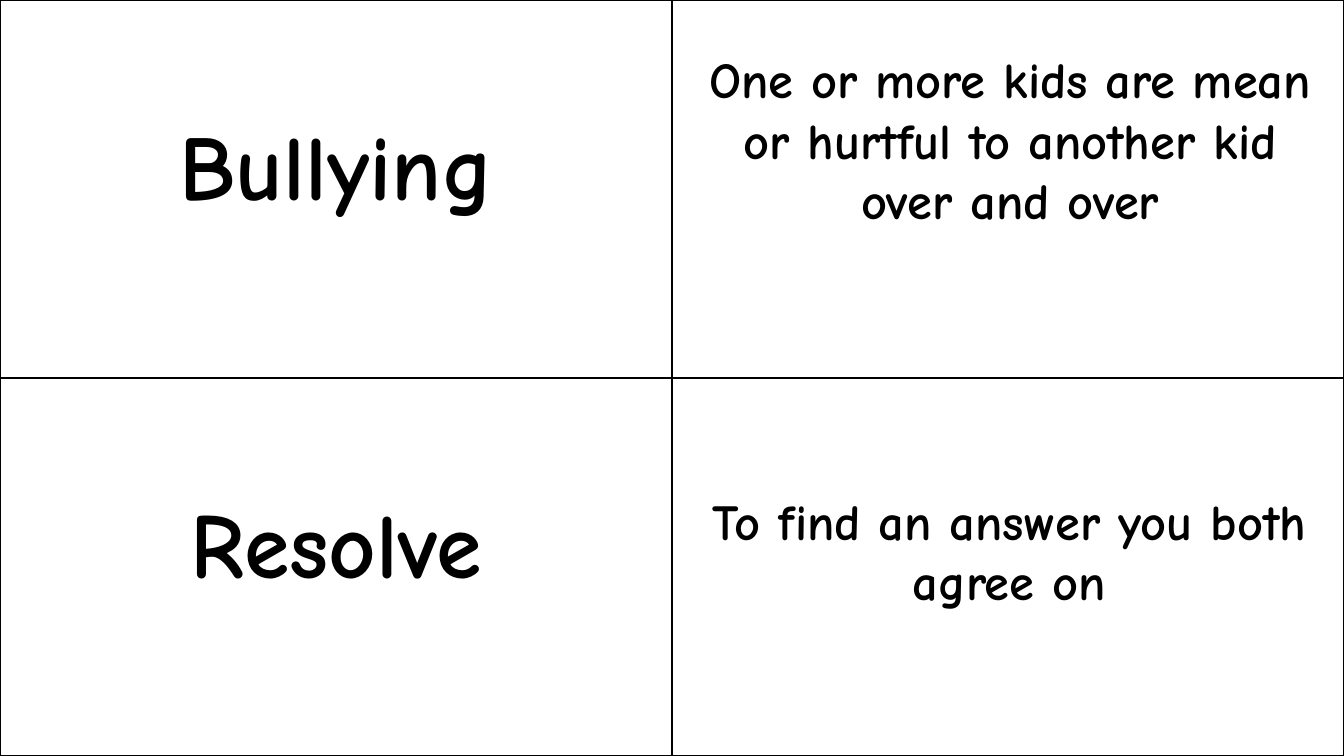
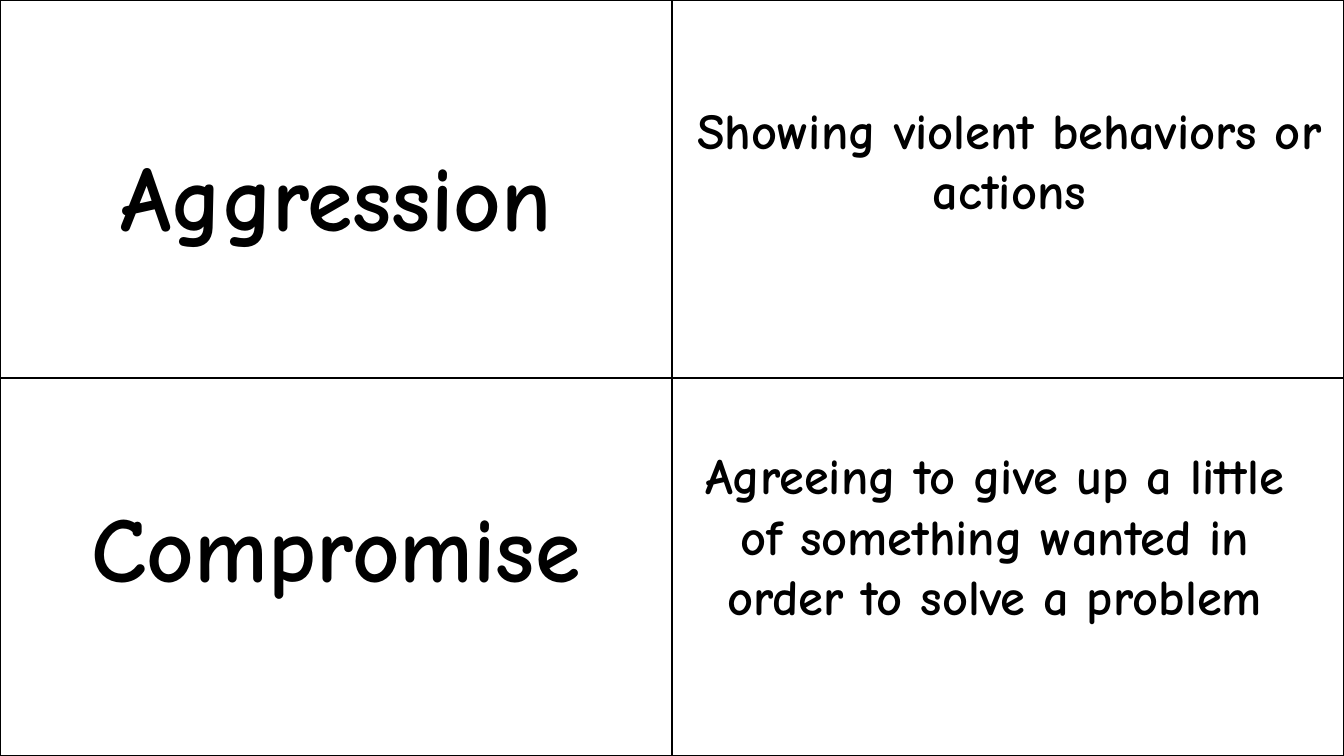
from pptx import Presentation
from pptx.dml.color import RGBColor
from pptx.enum import shapes, text
from pptx.util import Pt

BLACK = RGBColor(0, 0, 0)
WHITE = RGBColor(255, 255, 255)
FONT = "Comic Neue"
CARD_WIDTH, CARD_HEIGHT = 480, 270
TERM_HEIGHT = 87
DEFINITION_WIDTH = 461
BLANK_LAYOUT = 6


class VocabularyDeck:
    def __init__(self):
        self.presentation = Presentation()
        self.presentation.slide_width = Pt(2 * CARD_WIDTH)
        self.presentation.slide_height = Pt(2 * CARD_HEIGHT)
        self.slide = None

    def add_slide(self):
        layout = self.presentation.slide_layouts[BLANK_LAYOUT]
        self.slide = self.presentation.slides.add_slide(layout)
        for row in range(2):
            for column in range(2):
                self.add_card(column * CARD_WIDTH, row * CARD_HEIGHT)

    def add_card(self, left, top):
        card = self.slide.shapes.add_shape(
            shapes.MSO_SHAPE.RECTANGLE,
            Pt(left), Pt(top), Pt(CARD_WIDTH), Pt(CARD_HEIGHT))
        card.shadow.inherit = False
        card.fill.solid()
        card.fill.fore_color.rgb = WHITE
        card.line.color.rgb = BLACK
        card.line.width = Pt(1)

    def add_text(self, words, left, top, width, height, size):
        box = self.slide.shapes.add_textbox(
            Pt(left), Pt(top), Pt(width), Pt(height))
        frame = box.text_frame
        frame.word_wrap = True
        frame.auto_size = text.MSO_AUTO_SIZE.SHAPE_TO_FIT_TEXT
        paragraph = frame.paragraphs[0]
        paragraph.text = words
        paragraph.alignment = text.PP_ALIGN.CENTER
        paragraph.font.name = FONT
        paragraph.font.size = Pt(size)
        paragraph.font.bold = True
        paragraph.font.color.rgb = BLACK

    def add_term(self, words, top, width=CARD_WIDTH):
        left = (CARD_WIDTH - width) / 2
        self.add_text(words, left, top, width, TERM_HEIGHT, 66)

    def add_definition(self, words, left, top, height):
        self.add_text(words, left, top, DEFINITION_WIDTH, height, 36)


def main():
    deck = VocabularyDeck()

    deck.add_slide()
    deck.add_term("Bullying", 73.5, 428)
    deck.add_definition(
        "One or more kids are mean or hurtful to another kid over and over",
        491, 31, 181.5)
    deck.add_term("Resolve", 343.5, 465)
    deck.add_definition("To find an answer you both agree on", 490.5, 346.5, 94.5)

    deck.add_slide()
    deck.add_term("Aggression", 96)
    deck.add_definition("Showing violent behaviors or actions", 490.5, 67, 94.5)
    deck.add_term("Compromise", 346.5)
    deck.add_definition(
        "Agreeing to give up a little of something wanted in order to solve a problem",
        480, 314, 181.5)

    deck.presentation.save("out.pptx")


if __name__ == "__main__":
    main()
